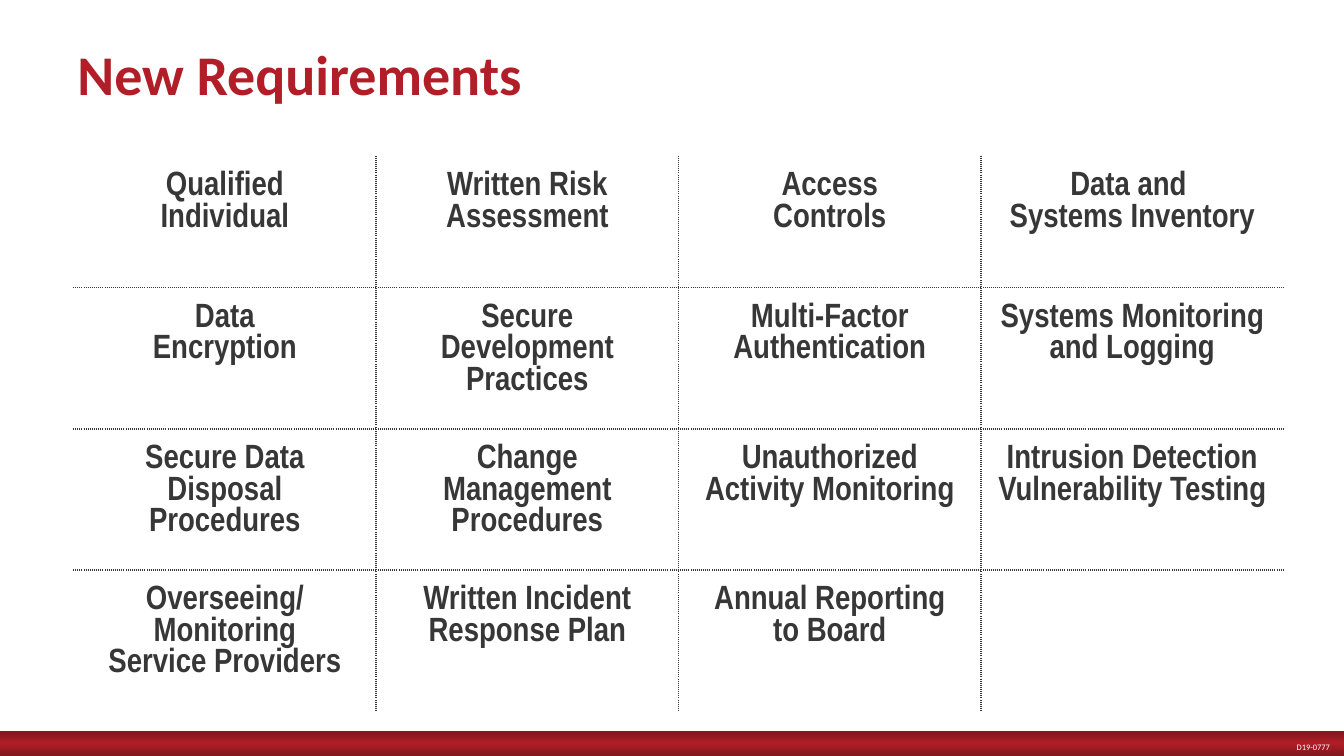
from copy import deepcopy

from lxml import etree
from pptx import Presentation
from pptx.dml.color import RGBColor
from pptx.enum import shapes, text
from pptx.oxml import ns
from pptx.util import Inches, Pt

RED = RGBColor(0xB2, 0x1E, 0x28)
DARK_RED = RGBColor(0x86, 0x17, 0x1E)
GREY = RGBColor(0x37, 0x37, 0x37)
WHITE = RGBColor(0xFF, 0xFF, 0xFF)

REQUIREMENTS = [
    ["Qualified\nIndividual", "Written Risk\nAssessment",
     "Access\nControls", "Data and \nSystems Inventory"],
    ["Data\nEncryption", "Secure Development\nPractices",
     "Multi-Factor\nAuthentication", "Systems Monitoring\nand Logging"],
    ["Secure Data\nDisposal Procedures", "Change Management\nProcedures",
     "Unauthorized\nActivity Monitoring", "Intrusion Detection\nVulnerability Testing"],
    ["Overseeing/Monitoring\nService Providers", "Written Incident\nResponse Plan",
     "Annual Reporting\nto Board", ""],
]


def add_label(slide, words, box, size, color):
    """Add a one-line text box in Calibri and return its text frame."""
    frame = slide.shapes.add_textbox(*(Inches(n) for n in box)).text_frame
    frame.word_wrap = True
    line = frame.paragraphs[0]
    line.text = words
    line.font.name = "Calibri"
    line.font.size = Pt(size)
    line.font.color.rgb = color
    return frame


def add_dotted_border(cell, side):
    """Draw one side (L, R, T or B) of a cell as a dotted line."""
    border = etree.SubElement(cell._tc.get_or_add_tcPr(), ns.qn(f"a:ln{side}"), w=str(Pt(1)))
    fill = etree.SubElement(border, ns.qn("a:solidFill"))
    etree.SubElement(fill, ns.qn("a:srgbClr"), val=str(GREY))
    etree.SubElement(border, ns.qn("a:prstDash"), val="sysDot")


prs = Presentation()
prs.slide_width = Inches(13.33)
prs.slide_height = Inches(7.5)
slide = prs.slides.add_slide(prs.slide_layouts[6])

# Footer band
band = slide.shapes.add_shape(
    shapes.MSO_SHAPE.RECTANGLE, 0, Inches(7.25), prs.slide_width, Inches(0.25))
band.shadow.inherit = False
band.line.fill.background()
band.fill.gradient()
band.fill.gradient_angle = 270
stop_list = band._element.spPr.find(".//" + ns.qn("a:gsLst"))
stop_list.append(deepcopy(stop_list[0]))
band_colors = [(0.08, DARK_RED), (0.49, RED), (0.92, DARK_RED)]
for stop, (position, color) in zip(band.fill.gradient_stops, band_colors):
    stop.position = position
    stop.color.rgb = color

document_code = add_label(slide, "D19-0777", (11.47, 7.36, 1.72, 0.1), 6, WHITE)
document_code.margin_left = document_code.margin_right = 0
document_code.margin_top = document_code.margin_bottom = 0
document_code.paragraphs[0].alignment = text.PP_ALIGN.RIGHT

title = add_label(slide, "New Requirements", (0.67, 0.33, 12, 0.8), 40, RED)
title.vertical_anchor = text.MSO_ANCHOR.MIDDLE
title.paragraphs[0].font.bold = True

# Requirements grid, with lines between the cells only
row_count, column_count = len(REQUIREMENTS), len(REQUIREMENTS[0])
grid = slide.shapes.add_table(
    row_count, column_count, Inches(0.73), Inches(1.55), Inches(12), Inches(5.22)).table
grid.first_row = False
grid.horz_banding = False
for r, row in enumerate(REQUIREMENTS):
    for c, requirement in enumerate(row):
        cell = grid.cell(r, c)
        cell.margin_left = cell.margin_right = cell.margin_top = Inches(0.15)
        cell.margin_bottom = Inches(0.05)
        inner_sides = {"L": c > 0, "R": c < column_count - 1,
                       "T": r > 0, "B": r < row_count - 1}
        for side, is_inner in inner_sides.items():
            if is_inner:
                add_dotted_border(cell, side)
        cell.fill.solid()
        cell.fill.fore_color.rgb = WHITE
        if requirement:
            entry = cell.text_frame.paragraphs[0]
            entry.text = requirement
            entry.alignment = text.PP_ALIGN.CENTER
            # Row heights are measured from the runs and breaks, so the font goes there
            for run in entry.runs:
                run.font.name = "Arial Narrow"
                run.font.size = Pt(24)
                run.font.bold = True
                run.font.color.rgb = GREY
            run_format = entry.runs[0]._r.rPr
            for line_break in entry._p.findall(ns.qn("a:br")):
                line_break.insert(0, deepcopy(run_format))
            end_format = deepcopy(run_format)
            end_format.tag = ns.qn("a:endParaRPr")
            entry._p.append(end_format)

prs.save("out.pptx")
